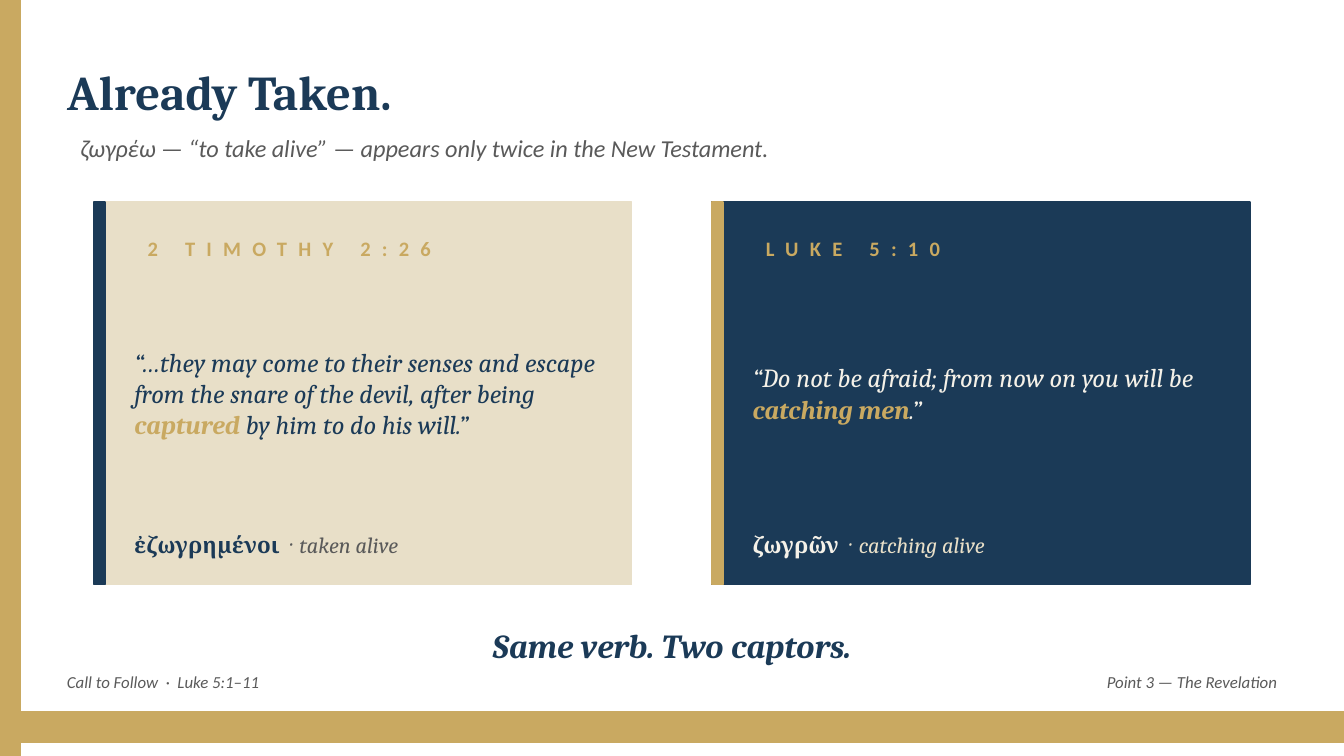
import pptx
import pptx.dml.color
import pptx.enum.shapes
import pptx.enum.text
import pptx.util

Inches = pptx.util.Inches
RGBColor = pptx.dml.color.RGBColor
ALIGN = pptx.enum.text.PP_ALIGN

NAVY = RGBColor(0x1B, 0x3A, 0x57)
GOLD = RGBColor(0xC9, 0xA9, 0x61)
SAND = RGBColor(0xE8, 0xDF, 0xC8)
IVORY = RGBColor(0xF5, 0xF1, 0xE8)
GRAY = RGBColor(0x5A, 0x5A, 0x5A)

# A 16:9 slide, 10 inches wide
SLIDE_WIDTH = 10
SLIDE_HEIGHT = SLIDE_WIDTH * 9 / 16

presentation = pptx.Presentation()
presentation.slide_width = Inches(SLIDE_WIDTH)
presentation.slide_height = Inches(SLIDE_HEIGHT)
slide = presentation.slides.add_slide(presentation.slide_layouts[5])


def add_bar(left, top, width, height, color):
    shape = slide.shapes.add_shape(
        pptx.enum.shapes.MSO_SHAPE.RECTANGLE,
        Inches(left), Inches(top), Inches(width), Inches(height))
    shape.shadow.inherit = False
    shape.fill.solid()
    shape.fill.fore_color.rgb = color
    shape.line.color.rgb = color
    shape.line.width = pptx.util.Pt(1)


def write(runs, left, top, width, height, size, font="Calibri",
          align=ALIGN.LEFT, inset=True, spacing=0, shape=None):
    """Each run is (text, color, style); style holds "b" and/or "i"."""
    if shape is None:
        shape = slide.shapes.add_textbox(0, 0, 0, 0)
    shape.left, shape.top = Inches(left), Inches(top)
    shape.width, shape.height = Inches(width), Inches(height)
    frame = shape.text_frame
    frame.word_wrap = True
    frame.auto_size = pptx.enum.text.MSO_AUTO_SIZE.NONE
    frame.vertical_anchor = pptx.enum.text.MSO_ANCHOR.MIDDLE
    if not inset:
        frame.margin_left = frame.margin_right = 0
        frame.margin_top = frame.margin_bottom = 0
    paragraph = frame.paragraphs[0]
    paragraph.alignment = align
    for text, color, style in runs:
        run = paragraph.add_run()
        run.text = text
        run.font.name = font
        run.font.size = pptx.util.Pt(size)
        run.font.color.rgb = color
        run.font.bold = "b" in style
        run.font.italic = "i" in style
        if spacing:
            run.font._element.set("spc", str(spacing * 100))


# Left edge, title and subtitle
add_bar(0, 0, 0.15, SLIDE_HEIGHT, GOLD)
write([("Already Taken.", NAVY, "b")], 0.5, 0.4, 9, 0.55, 26,
      font="Cambria", inset=False, shape=slide.shapes.title)
write([("ζωγρέω — “to take alive” — appears only twice in the New Testament.",
        GRAY, "i")], 0.5, 0.95, 9, 0.3, 13)

# Two verse cards: left, fill, accent, reference, quote, Greek word with gloss
cards = [
    (0.7, SAND, NAVY, "2 TIMOTHY 2:26",
     [("“…they may come to their senses and escape from the snare of the "
       "devil, after being ", NAVY, "i"),
      ("captured", GOLD, "bi"),
      (" by him to do his will.”", NAVY, "i")],
     [("ἐζωγρημένοι", NAVY, "b"), ("  ·  taken alive", GRAY, "i")]),
    (5.3, NAVY, GOLD, "LUKE 5:10",
     [("“Do not be afraid; from now on you will be ", IVORY, "i"),
      ("catching men", GOLD, "bi"),
      (".”", IVORY, "i")],
     [("ζωγρῶν", IVORY, "b"), ("  ·  catching alive", SAND, "i")]),
]
for left, fill, accent, reference, quote, greek in cards:
    add_bar(left, 1.5, 4, 2.85, fill)
    add_bar(left, 1.5, 0.08, 2.85, accent)
    text_left = left + 0.3
    write([(reference, GOLD, "b")], text_left, 1.7, 3.5, 0.3, 11, spacing=6)
    write(quote, text_left, 2.05, 3.5, 1.75, 14, font="Cambria", inset=False)
    write(greek, text_left, 3.85, 3.5, 0.4, 12, font="Cambria", inset=False)

# Closing line
write([("Same verb. Two captors.", NAVY, "bi")], 0.5, 4.6, 9, 0.4, 18,
      font="Cambria", align=ALIGN.CENTER)

# Footer
add_bar(0, 5.3, SLIDE_WIDTH, 0.22, GOLD)
write([("Call to Follow  ·  Luke 5:1–11", GRAY, "i")], 0.4, 4.95, 6, 0.25, 9)
write([("Point 3 — The Revelation", GRAY, "i")], 6.5, 4.95, 3.1, 0.25, 9,
      align=ALIGN.RIGHT)

presentation.save("out.pptx")
